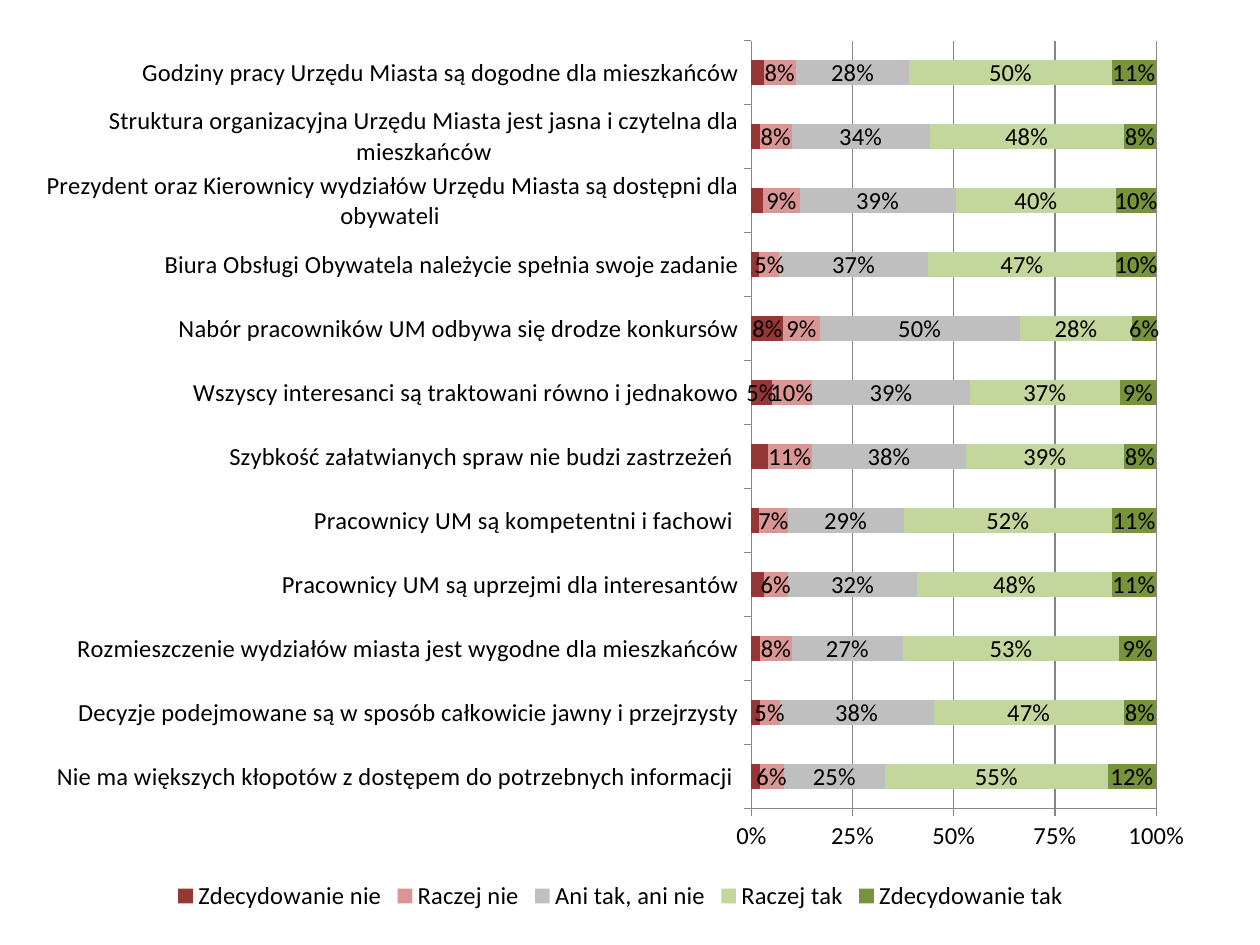
from lxml.etree import SubElement
from pptx import Presentation
from pptx.chart.data import CategoryChartData
from pptx.dml.color import RGBColor
from pptx.enum.chart import (
    XL_CHART_TYPE as ChartType,
    XL_LABEL_POSITION as LabelPos,
    XL_LEGEND_POSITION as LegendPos,
    XL_TICK_MARK as Tick,
)
from pptx.oxml.ns import qn
from pptx.util import Pt

BLACK = RGBColor(0, 0, 0)
GRID = RGBColor(0x86, 0x86, 0x86)
DARK_RED = RGBColor(0x95, 0x37, 0x35)
PINK = RGBColor(0xD9, 0x96, 0x94)
GRAY = RGBColor(0xBF, 0xBF, 0xBF)
LIGHT_GREEN = RGBColor(0xC3, 0xD6, 0x9B)
GREEN = RGBColor(0x77, 0x93, 0x3C)

STATEMENTS = [
    "Nie ma większych kłopotów z dostępem do potrzebnych informacji ",
    "Decyzje podejmowane są w sposób całkowicie jawny i przejrzysty",
    "Rozmieszczenie wydziałów miasta jest wygodne dla mieszkańców",
    "Pracownicy UM są uprzejmi dla interesantów",
    "Pracownicy UM są kompetentni i fachowi ",
    "Szybkość załatwianych spraw nie budzi zastrzeżeń ",
    "Wszyscy interesanci są traktowani równo i jednakowo",
    "Nabór pracowników UM odbywa się drodze konkursów",
    "Biura Obsługi Obywatela należycie spełnia swoje zadanie",
    "Prezydent oraz Kierownicy wydziałów Urzędu Miasta są dostępni dla obywateli ",
    "Struktura organizacyjna Urzędu Miasta jest jasna i czytelna dla mieszkańców",
    "Godziny pracy Urzędu Miasta są dogodne dla mieszkańców",
]
ANSWERS = [
    ("Zdecydowanie nie", DARK_RED, [2, 2, 2, 3, 2, 4, 5, 8, 2, 3, 2, 3]),
    ("Raczej nie", PINK, [6, 5, 8, 6, 7, 11, 10, 9, 5, 9, 8, 8]),
    ("Ani tak, ani nie", GRAY, [25, 38, 27, 32, 29, 38, 39, 50, 37, 39, 34, 28]),
    ("Raczej tak", LIGHT_GREEN, [55, 47, 53, 48, 52, 39, 37, 28, 47, 40, 48, 50]),
    ("Zdecydowanie tak", GREEN, [12, 8, 9, 11, 11, 8, 9, 6, 10, 10, 8, 11]),
]
MIN_LABELLED = 5


def place_plot(chart, x, y, w, h):
    area = chart._chartSpace.chart.plotArea
    for old in area.findall(qn("c:layout")):
        area.remove(old)
    layout = SubElement(area, qn("c:layout"))
    area.insert(0, layout)
    manual = SubElement(layout, qn("c:manualLayout"))
    settings = [("layoutTarget", "inner"), ("xMode", "edge"), ("yMode", "edge"),
                ("x", x), ("y", y), ("w", w), ("h", h)]
    for tag, value in settings:
        SubElement(manual, qn(f"c:{tag}")).set("val", str(value))


def style_axes(chart):
    cat, val = chart.category_axis, chart.value_axis
    for axis in (cat, val):
        axis.major_tick_mark = Tick.OUTSIDE
        axis.minor_tick_mark = Tick.NONE
        axis.format.line.color.rgb = GRID
        axis.format.line.width = Pt(0.75)
    cat.has_major_gridlines = False
    val.has_major_gridlines = True
    val.major_gridlines.format.line.color.rgb = GRID
    val.major_gridlines.format.line.width = Pt(0.75)
    val.minimum_scale, val.maximum_scale, val.major_unit = 0, 1, 0.25
    val.tick_labels.number_format = "0%"
    val.tick_labels.number_format_is_linked = False


def style_series(series, color, percents):
    series.format.fill.solid()
    series.format.fill.fore_color.rgb = color
    labels = series.data_labels
    labels.number_format = "0%"
    labels.number_format_is_linked = False
    labels.show_value = min(percents) >= MIN_LABELLED
    if labels.show_value:
        labels.position = LabelPos.CENTER
        return
    for i, percent in enumerate(percents):
        if percent >= MIN_LABELLED:
            series.points[i].data_label.position = LabelPos.CENTER


def add_opinion_chart(slide, left, top, width, height):
    data = CategoryChartData(number_format="0%")
    data.categories = STATEMENTS
    for name, _, percents in ANSWERS:
        data.add_series(name, [p / 100 for p in percents])
    chart = slide.shapes.add_chart(
        ChartType.BAR_STACKED_100, left, top, width, height, data).chart
    chart.font.name = "Calibri"
    chart.font.size = Pt(14)
    chart.font.color.rgb = BLACK
    chart.has_title = False
    chart.has_legend = True
    chart.legend.position = LegendPos.BOTTOM
    chart.legend.include_in_layout = False
    plot = chart.plots[0]
    plot.gap_width, plot.overlap = 150, 100
    plot.vary_by_categories = False
    for series, (_, color, percents) in zip(plot.series, ANSWERS):
        style_series(series, color, percents)
    style_axes(chart)
    place_plot(chart, 0.61, 0.02, 0.34, 0.86)


def main():
    prs = Presentation()
    prs.slide_width, prs.slide_height = Pt(720), Pt(540)
    slide = prs.slides.add_slide(prs.slide_layouts[6])
    add_opinion_chart(slide, Pt(14.4), Pt(13), Pt(680.4), Pt(510.5))
    prs.save("out.pptx")


if __name__ == "__main__":
    main()
